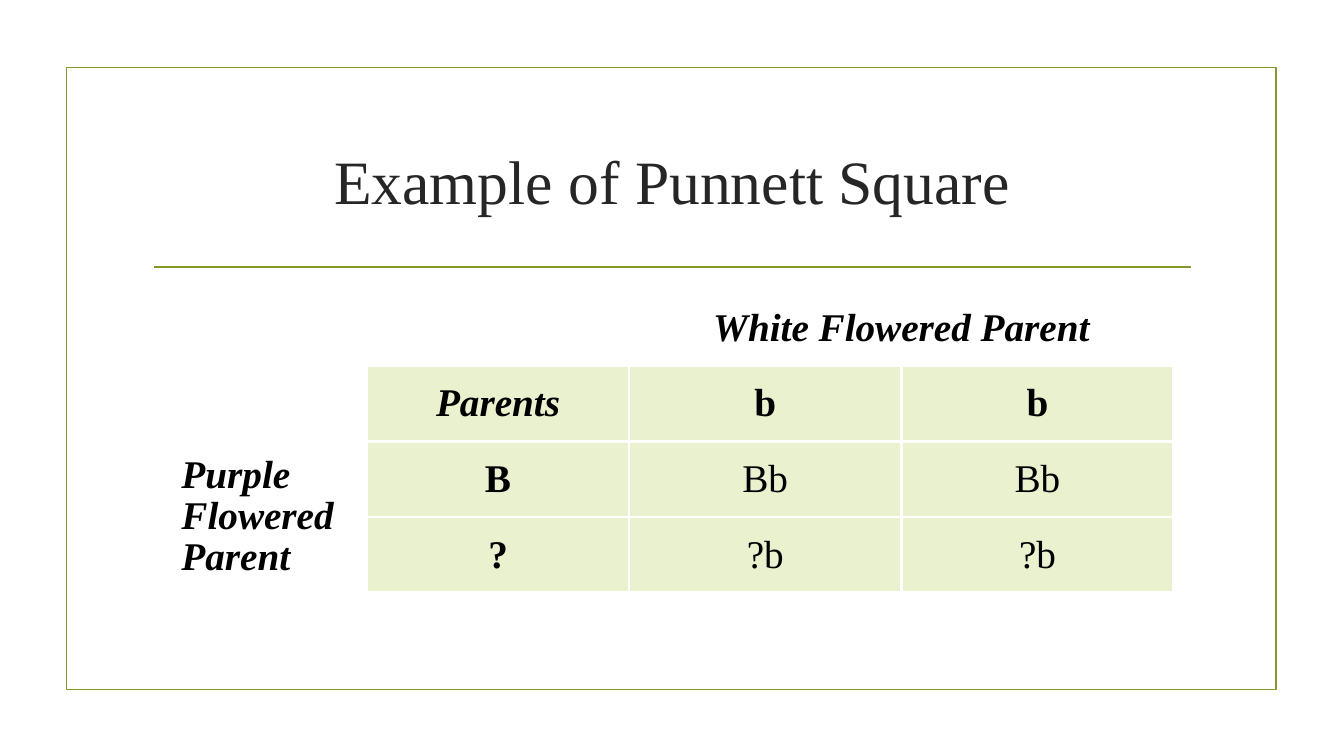
import dataclasses

import lxml.etree
import pptx
import pptx.dml.color
import pptx.enum.shapes
import pptx.enum.text
import pptx.oxml.ns
import pptx.util

Inches = pptx.util.Inches
Pt = pptx.util.Pt
RGB = pptx.dml.color.RGBColor.from_string
ALIGN = pptx.enum.text.PP_ALIGN
MIDDLE = pptx.enum.text.MSO_ANCHOR.MIDDLE
qn = pptx.oxml.ns.qn


@dataclasses.dataclass(frozen=True)
class Theme:
    font: str = "Times New Roman"
    accent: str = "83992A"
    cell: str = "EAF1CE"
    border: str = "FFFFFF"
    title: str = "262626"
    text: str = "000000"
    title_size: float = 44
    text_size: float = 28
    rule: float = 1.25
    grid: float = 2.25


theme = Theme()


def write(tf, text, size=theme.text_size, color=theme.text, bold=False,
          italic=False, align=ALIGN.CENTER, spacing=None):
    p = tf.paragraphs[0]
    p.alignment = align
    p.line_spacing = spacing
    r = p.add_run()
    r.text = text
    r.font.name = theme.font
    r.font.size = Pt(size)
    r.font.bold = bold
    r.font.italic = italic
    r.font.color.rgb = RGB(color)


def set_borders(cell, visible):
    """Draw the sides listed in visible (from L, R, T, B) and clear the others."""
    tcPr = cell._tc.get_or_add_tcPr()
    for side in "LRTB":
        ln = lxml.etree.SubElement(tcPr, qn(f"a:ln{side}"), w=str(Pt(theme.grid)))
        if side in visible:
            fill = lxml.etree.SubElement(ln, qn("a:solidFill"))
            lxml.etree.SubElement(fill, qn("a:srgbClr"), val=theme.border)
        else:
            lxml.etree.SubElement(ln, qn("a:noFill"))


prs = pptx.Presentation()
prs.slide_width = Inches(13.33)
prs.slide_height = Inches(7.5)
slide = prs.slides.add_slide(prs.slide_layouts[5])

# Frame and rule
frame = slide.shapes.add_shape(pptx.enum.shapes.MSO_SHAPE.RECTANGLE,
                               Inches(0.66), Inches(0.67), Inches(12), Inches(6.17))
frame.shadow.inherit = False
frame.fill.background()

rule = slide.shapes.add_connector(pptx.enum.shapes.MSO_CONNECTOR.STRAIGHT,
                                  Inches(1.53), Inches(2.65), Inches(11.81), Inches(2.65))
lxml.etree.SubElement(rule._element.spPr, qn("a:effectLst"))

for sp in (frame, rule):
    sp.line.color.rgb = RGB(theme.accent)
    sp.line.width = Pt(theme.rule)

# Title
title = slide.shapes.title
title.left, title.top = Inches(1.42), Inches(1.07)
title.width, title.height = Inches(10.5), Inches(1.43)
title.text_frame.vertical_anchor = MIDDLE
write(title.text_frame, "Example of Punnett Square",
      size=theme.title_size, color=theme.title)

# Punnett square: row 0 and column 0 hold the parent labels
rows = [
    ["", "", "White Flowered Parent", ""],
    ["", "Parents", "b", "b"],
    ["Purple Flowered Parent", "B", "Bb", "Bb"],
    ["", "?", "?b", "?b"],
]
col_widths = [1.94, 2.6, 2.7, 2.7]
row_height = 0.75
table = slide.shapes.add_table(len(rows), len(col_widths), Inches(1.7), Inches(2.88),
                               Inches(sum(col_widths)),
                               Inches(row_height * len(rows))).table
table.first_row = False
table.horz_banding = False
for column, width in zip(table.columns, col_widths):
    column.width = Inches(width)
table.cell(0, 2).merge(table.cell(0, 3))
table.cell(2, 0).merge(table.cell(3, 0))

for i, row in enumerate(rows):
    for j, text in enumerate(row):
        cell = table.cell(i, j)
        cell.vertical_anchor = MIDDLE
        if i and j:
            set_borders(cell, "LRTB")
            cell.fill.solid()
            cell.fill.fore_color.rgb = RGB(theme.cell)
        else:
            set_borders(cell, "B" if j else "R" if i else "")
            cell.fill.background()
        if text:
            write(cell.text_frame, text,
                  bold=i < 2 or j < 2,
                  italic="Parent" in text,
                  align=ALIGN.CENTER if j else ALIGN.LEFT,
                  spacing=None if j else 0.95)

prs.save("out.pptx")
